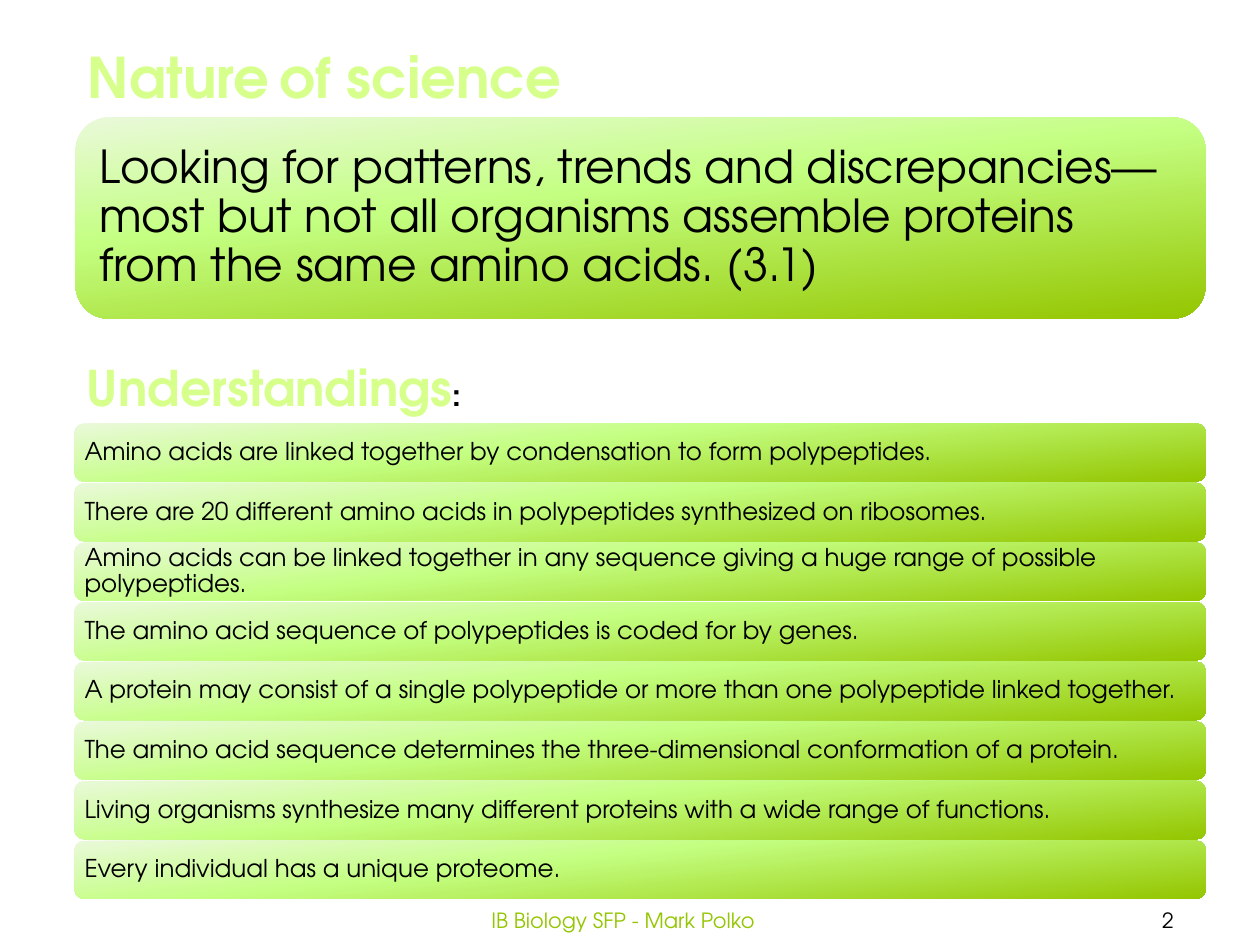
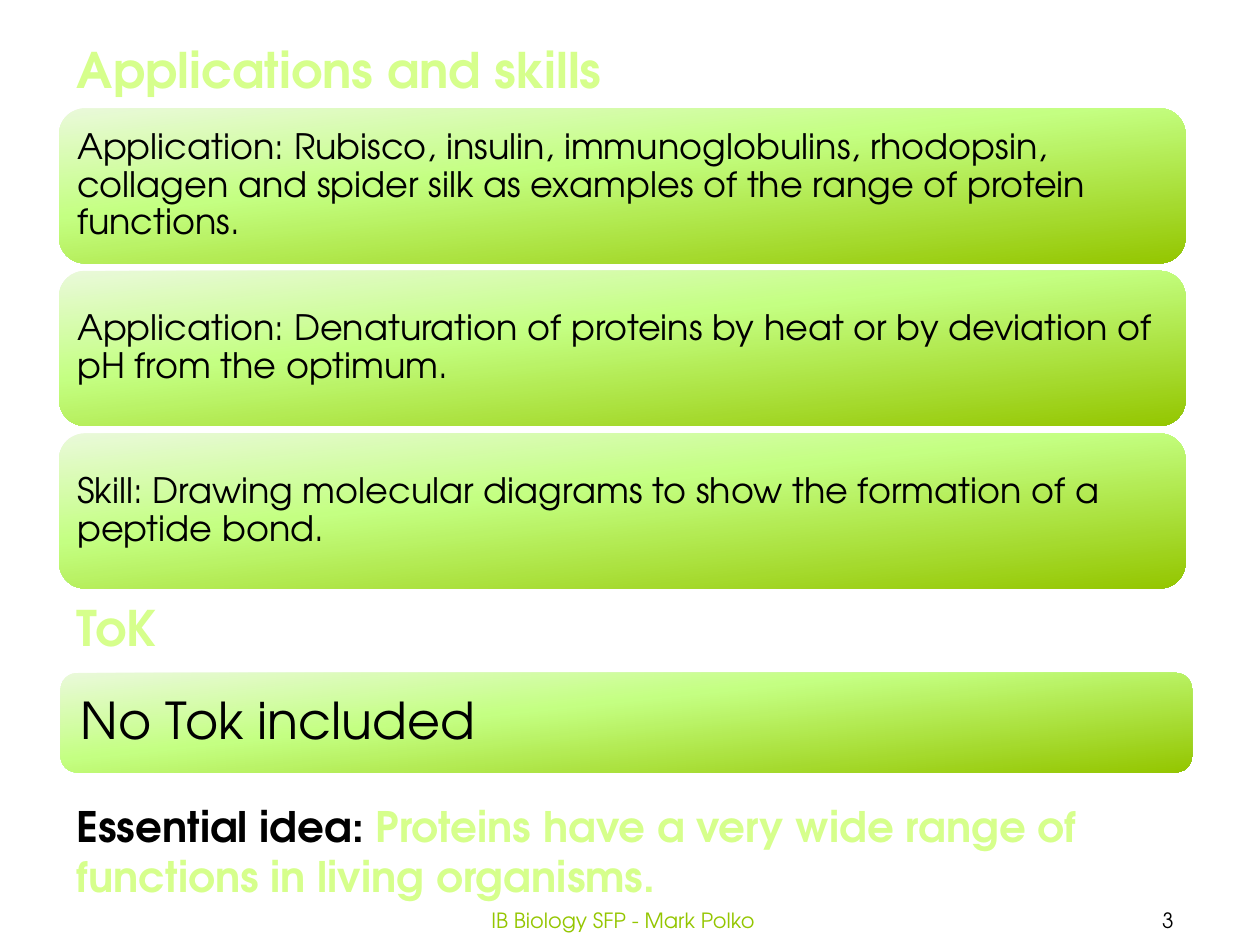
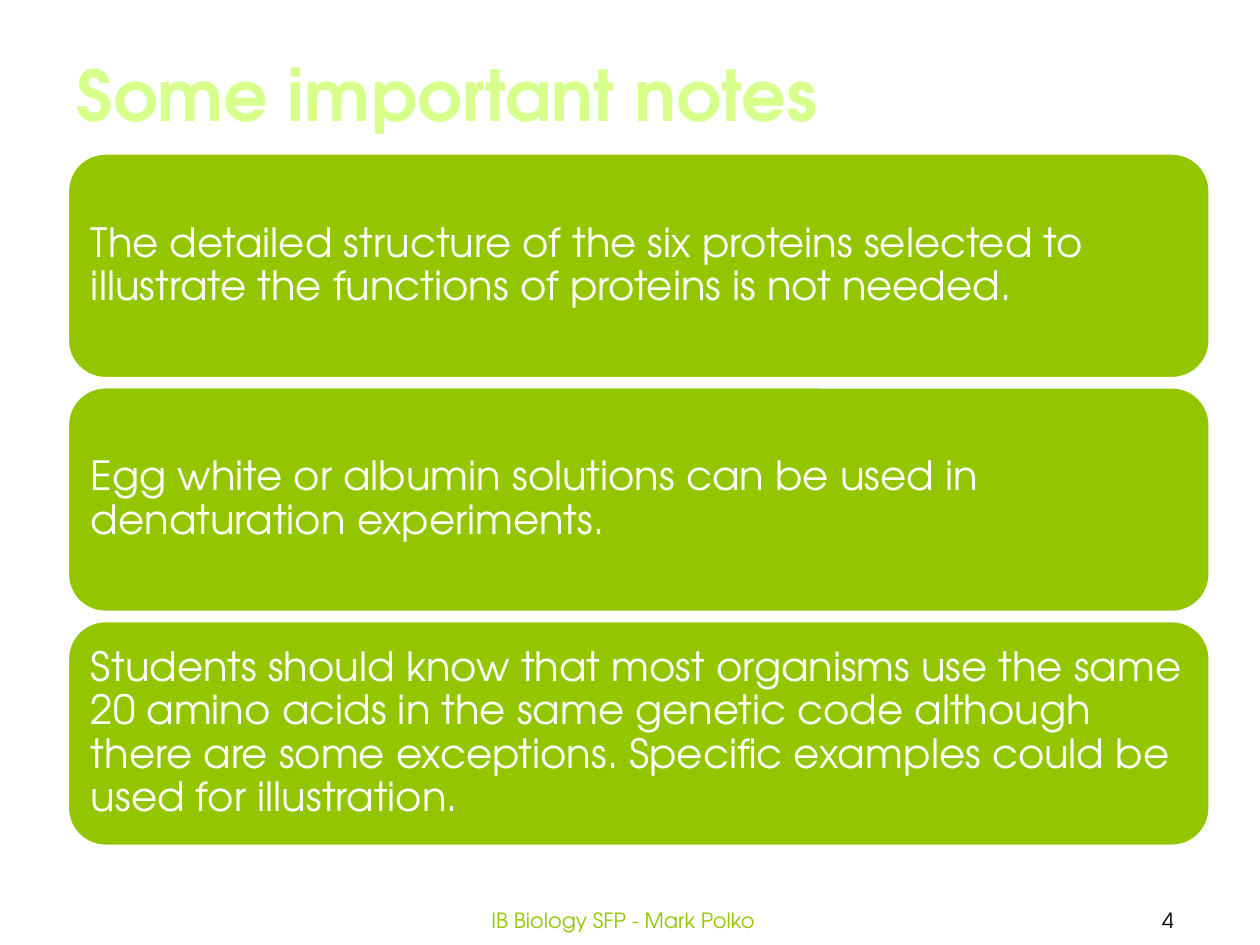
import copy

import pptx
import pptx.dml.color
import pptx.enum.shapes
import pptx.enum.text
import pptx.util

Pt = pptx.util.Pt
ALIGN = pptx.enum.text.PP_ALIGN
ANCHOR = pptx.enum.text.MSO_ANCHOR

FONT = "TeX Gyre Adventor"
COLORS = {
    "black": "000000",
    "white": "FFFFFF",
    "green": "94C600",
    "lime": "D6FF8C",
    "pale": "EAF9DA",
    "mint": "C4FF82",
}
FADE = [(0, "pale"), (0.4, "mint"), (1, "green")]
FOOTER = "IB Biology SFP - Mark Polko"

POINTS = [
    "Amino acids are linked together by condensation to form polypeptides.",
    "There are 20 different amino acids in polypeptides synthesized on ribosomes.",
    "Amino acids can be linked together in any sequence giving a huge range of possible polypeptides.",
    "The amino acid sequence of polypeptides is coded for by genes.",
    "A protein may consist of a single polypeptide or more than one polypeptide linked together.",
    "The amino acid sequence determines the three-dimensional conformation of a protein.",
    "Living organisms synthesize many different proteins with a wide range of functions.",
    "Every individual has a unique proteome.",
]
SKILLS = [
    "Application: Rubisco, insulin, immunoglobulins, rhodopsin, collagen and spider silk as examples of the range of protein functions.",
    "Application: Denaturation of proteins by heat or by deviation of pH from the optimum.",
    "Skill: Drawing molecular diagrams to show the formation of a peptide bond.",
]
NOTES = [
    "The detailed structure of the six proteins selected to illustrate the functions of proteins is not needed.",
    "Egg white or albumin solutions can be used in denaturation experiments.",
    "Students should know that most organisms use the same 20 amino acids in the same genetic code although there are some exceptions. Specific examples could be used for illustration.",
]


def rgb(name):
    return pptx.dml.color.RGBColor.from_string(COLORS[name])


def style(run, size, color, bold=False):
    run.font.name = FONT
    run.font.size = Pt(size)
    run.font.bold = bold
    run.font.color.rgb = rgb(color)


def place(shape, left, top, width, height):
    shape.left, shape.top = Pt(left), Pt(top)
    shape.width, shape.height = Pt(width), Pt(height)


def write(shape, runs):
    """Fill a heading with bold runs of (text, size, colour)."""
    frame = shape.text_frame
    frame.word_wrap = True
    frame.auto_size = pptx.enum.text.MSO_AUTO_SIZE.NONE
    frame.vertical_anchor = ANCHOR.TOP
    para = frame.paragraphs[0]
    para.alignment = ALIGN.LEFT
    for text, size, color in runs:
        run = para.add_run()
        run.text = text
        style(run, size, color, bold=True)


def title(slide, area, runs):
    place(slide.shapes.title, *area)
    write(slide.shapes.title, runs)


def heading(slide, area, runs):
    write(slide.shapes.add_textbox(*map(Pt, area)), runs)


def label(slide, area, text, color):
    """Add one centred footer text."""
    frame = slide.shapes.add_textbox(*map(Pt, area)).text_frame
    frame.word_wrap = True
    frame.vertical_anchor = ANCHOR.MIDDLE
    frame.text = text
    frame.paragraphs[0].alignment = ALIGN.CENTER
    style(frame.paragraphs[0].runs[0], 12, color)


def fade(shape):
    """Give a shape the three-stop green gradient."""
    fill = shape.fill
    fill.gradient()
    fill.gradient_angle = 276
    first = fill.gradient_stops[0]._gs
    first.addnext(copy.deepcopy(first))
    for stop, (pos, color) in zip(fill.gradient_stops, FADE):
        stop.position = pos
        stop.color.rgb = rgb(color)


def card(slide, area, text, size, inset, solid=False):
    shape = slide.shapes.add_shape(
        pptx.enum.shapes.MSO_SHAPE.ROUNDED_RECTANGLE, *map(Pt, area))
    shape.shadow.inherit = False
    if solid:
        shape.fill.solid()
        shape.fill.fore_color.rgb = rgb("green")
        shape.line.color.rgb = rgb("white")
        shape.line.width = Pt(1.25)
    else:
        fade(shape)
        shape.line.fill.background()
    frame = shape.text_frame
    frame.word_wrap = True
    frame.vertical_anchor = ANCHOR.MIDDLE
    frame.margin_left = frame.margin_right = Pt(inset)
    frame.margin_top = frame.margin_bottom = Pt(inset)
    frame.text = text
    para = frame.paragraphs[0]
    para.alignment = ALIGN.LEFT
    para.line_spacing = 0.9
    style(para.runs[0], size, "white" if solid else "black")


def stack(slide, area, step, texts, size, inset, solid=False):
    """Add cards below each other at an equal step."""
    left, top, width, height = area
    for i, text in enumerate(texts):
        card(slide, (left, top + i * step, width, height),
             text, size, inset, solid)


def start(deck, number):
    """Add a title-only slide with its footer."""
    slide = deck.slides.add_slide(deck.slide_layouts[5])
    label(slide, (614.9, 511.2, 105.1, 28.8), str(number), "black")
    label(slide, (218.2, 511.2, 275.8, 28.8), FOOTER, "green")
    return slide


def main():
    deck = pptx.Presentation()
    deck.slide_width, deck.slide_height = Pt(720), Pt(540)

    # Nature of science and understandings
    slide = start(deck, 2)
    title(slide, (43, 20.9, 288.7, 46),
          [("Nature", 32, "lime"), (" ", 20, "black"),
           ("of science", 32, "lime")])
    card(slide, (43.2, 67, 645.8, 115.2),
         "Looking for patterns, trends and discrepancies—most but not all "
         "organisms assemble proteins from the same amino acids. (3.1)",
         26, 7.8)
    heading(slide, (42.5, 200.9, 234, 41),
            [("Understandings", 28, "lime"), (":", 18, "black")])
    stack(slide, (42.5, 241.9, 646.6, 33.4), 34.06, POINTS, 14, 4.2)

    # Applications, theory of knowledge and essential idea
    slide = start(deck, 3)
    title(slide, (36.7, 18.7, 345.6, 41),
          [("Applications and skills", 28, "lime")])
    stack(slide, (33.8, 61.9, 643.7, 88.6), 92.9, SKILLS, 20, 6)
    heading(slide, (36.7, 337.7, 345.6, 41), [("ToK", 28, "lime")])
    card(slide, (34.6, 384.5, 646.6, 56.9), "No Tok included", 29, 8.7)
    heading(slide, (36.7, 453.6, 650.2, 65.5),
            [("Essential idea:", 24, "black"),
             (" Proteins have a very wide range of functions in living organisms.",
              24, "lime")])

    # Notes
    slide = start(deck, 4)
    title(slide, (36.7, 25.9, 510.5, 55.4),
          [("Some important notes", 40, "lime")])
    stack(slide, (38.9, 87.8, 652.3, 128.2), 133.6, NOTES, 23, 6.9, solid=True)

    deck.save("out.pptx")


if __name__ == "__main__":
    main()
